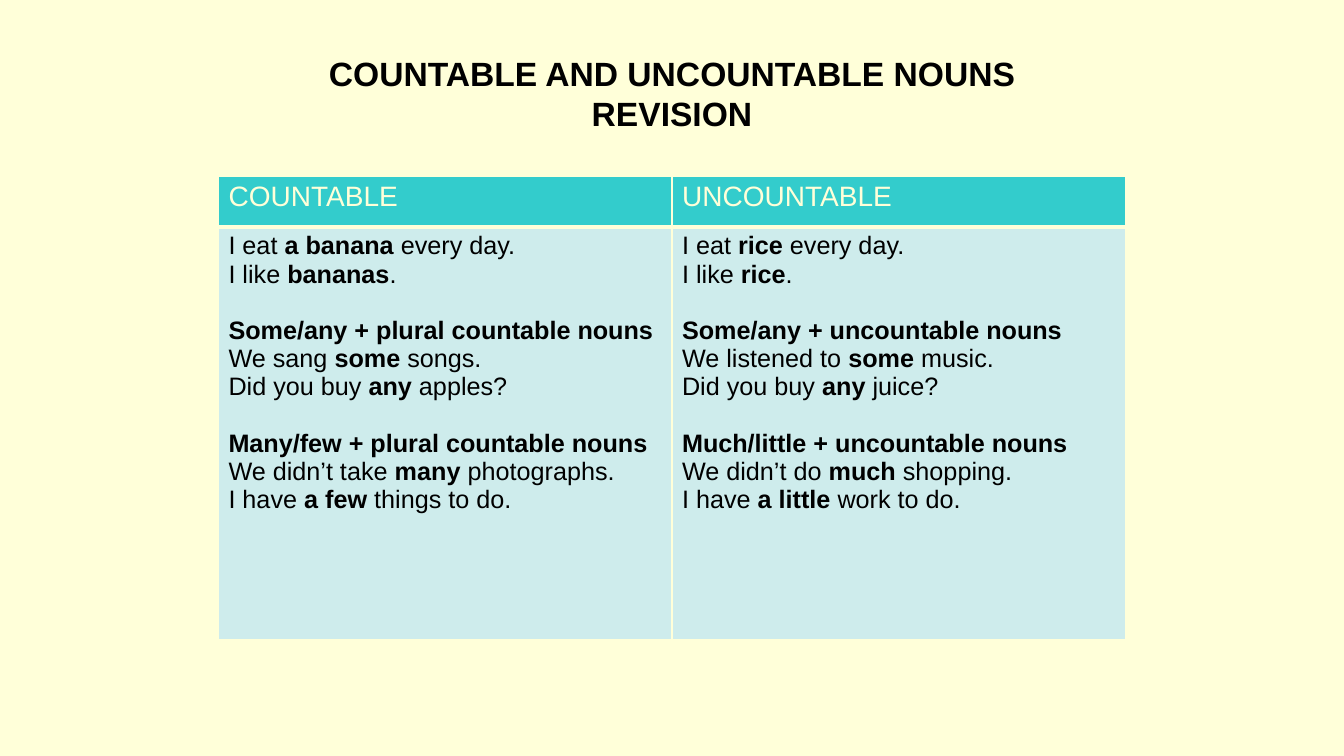
from dataclasses import dataclass

from lxml import etree
from pptx import Presentation
from pptx.dml.color import RGBColor
from pptx.enum.text import MSO_ANCHOR, MSO_AUTO_SIZE, PP_ALIGN
from pptx.oxml.ns import qn
from pptx.util import Cm, Pt

CENTER = PP_ALIGN.CENTER
MIDDLE = MSO_ANCHOR.MIDDLE
NO_AUTOFIT = MSO_AUTO_SIZE.NONE
TITLE_ONLY = 5


@dataclass(frozen=True)
class Theme:
    font: str = "Arial"
    cream: str = "FFFFD9"
    teal: str = "33CCCC"
    pale_teal: str = "CEECEC"
    black: str = "000000"
    title_size: int = 24
    header_size: int = 20
    body_size: int = 18
    group_gap: int = 20
    border: int = 1
    header_rule: int = 3


THEME = Theme()

SLIDE_WIDTH, SLIDE_HEIGHT = 33.87, 19.05
TITLE_WIDTH, TITLE_TOP, TITLE_HEIGHT = 30.48, 0.76, 3.18
TABLE_WIDTH, TABLE_TOP = 22.86, 4.45
ROW_HEIGHTS = (1.27, 10.39)

TITLE_LINES = ("COUNTABLE AND UNCOUNTABLE NOUNS", "REVISION")

# Each column holds groups of lines; asterisks enclose bold words
COLUMNS = {
    "COUNTABLE": (
        ("I eat *a banana *every day.", "I like *bananas*."),
        ("*Some/any + plural countable nouns*",
         "We sang *some* songs.",
         "Did you buy *any* apples?"),
        ("*Many/few + plural countable nouns*",
         "We didn’t take *many* photographs.",
         "I have *a few *things to do."),
    ),
    "UNCOUNTABLE": (
        ("I eat *rice* every day.", "I like *rice*."),
        ("*Some/any + uncountable nouns*",
         "We listened to *some* music.",
         "Did you buy *any* juice?"),
        ("*Much/little + uncountable nouns*",
         "We didn’t do *much* shopping.",
         "I have *a little *work to do."),
    ),
}


def set_attributes(target, values):
    for name, value in values.items():
        setattr(target, name, value)


def format_font(font, size, color, bold=False):
    set_attributes(font, {"name": THEME.font, "size": Pt(size), "bold": bold})
    font.color.rgb = RGBColor.from_string(color)


def add_runs(paragraph, text, size, color):
    """Write text, switching bold on and off at each asterisk."""
    for index, part in enumerate(text.split("*")):
        if part:
            run = paragraph.add_run()
            run.text = part
            format_font(run.font, size, color, bold=index % 2 == 1)


def style_cell(cell, fill, bottom_width):
    """Draw the cell's borders and fill."""
    properties = cell._tc.get_or_add_tcPr()
    widths = {"a:lnL": THEME.border, "a:lnR": THEME.border,
              "a:lnT": THEME.border, "a:lnB": bottom_width}
    for tag, width in widths.items():
        line = etree.SubElement(properties, qn(tag), w=str(Pt(width)))
        solid = etree.SubElement(line, qn("a:solidFill"))
        etree.SubElement(solid, qn("a:srgbClr"), val=THEME.cream)
    cell.fill.solid()
    cell.fill.fore_color.rgb = RGBColor.from_string(fill)


def fill_title(title):
    set_attributes(title, {
        "left": Cm((SLIDE_WIDTH - TITLE_WIDTH) / 2), "top": Cm(TITLE_TOP),
        "width": Cm(TITLE_WIDTH), "height": Cm(TITLE_HEIGHT),
    })
    set_attributes(title.text_frame, {
        "auto_size": NO_AUTOFIT, "word_wrap": True, "vertical_anchor": MIDDLE,
    })
    title.text_frame.text = "\v".join(TITLE_LINES)
    paragraph = title.text_frame.paragraphs[0]
    paragraph.alignment = CENTER
    for run in paragraph.runs:
        format_font(run.font, THEME.title_size, THEME.black, bold=True)


def fill_header(cell, text):
    style_cell(cell, THEME.teal, THEME.header_rule)
    add_runs(cell.text_frame.paragraphs[0], text,
             THEME.header_size, THEME.cream)


def fill_body(cell, groups):
    style_cell(cell, THEME.pale_teal, THEME.border)
    paragraph = cell.text_frame.paragraphs[0]
    for group_index, lines in enumerate(groups):
        for line_index, text in enumerate(lines):
            if group_index or line_index:
                paragraph = cell.text_frame.add_paragraph()
            if group_index and not line_index:
                paragraph.space_before = Pt(THEME.group_gap)
            add_runs(paragraph, text, THEME.body_size, THEME.black)


def add_noun_table(slide):
    frame = slide.shapes.add_table(
        len(ROW_HEIGHTS), len(COLUMNS),
        Cm((SLIDE_WIDTH - TABLE_WIDTH) / 2), Cm(TABLE_TOP),
        Cm(TABLE_WIDTH), Cm(sum(ROW_HEIGHTS)))
    table = frame.table
    table.horz_banding = False
    for row, height in zip(table.rows, ROW_HEIGHTS):
        row.height = Cm(height)
    for column, (heading, groups) in enumerate(COLUMNS.items()):
        fill_header(table.cell(0, column), heading)
        fill_body(table.cell(1, column), groups)


def main():
    presentation = Presentation()
    set_attributes(presentation, {
        "slide_width": Cm(SLIDE_WIDTH), "slide_height": Cm(SLIDE_HEIGHT),
    })
    slide = presentation.slides.add_slide(
        presentation.slide_layouts[TITLE_ONLY])

    # Background
    background = slide.background.fill
    background.solid()
    background.fore_color.rgb = RGBColor.from_string(THEME.cream)

    # Title and comparison table
    fill_title(slide.shapes.title)
    add_noun_table(slide)

    presentation.save("out.pptx")


if __name__ == "__main__":
    main()
